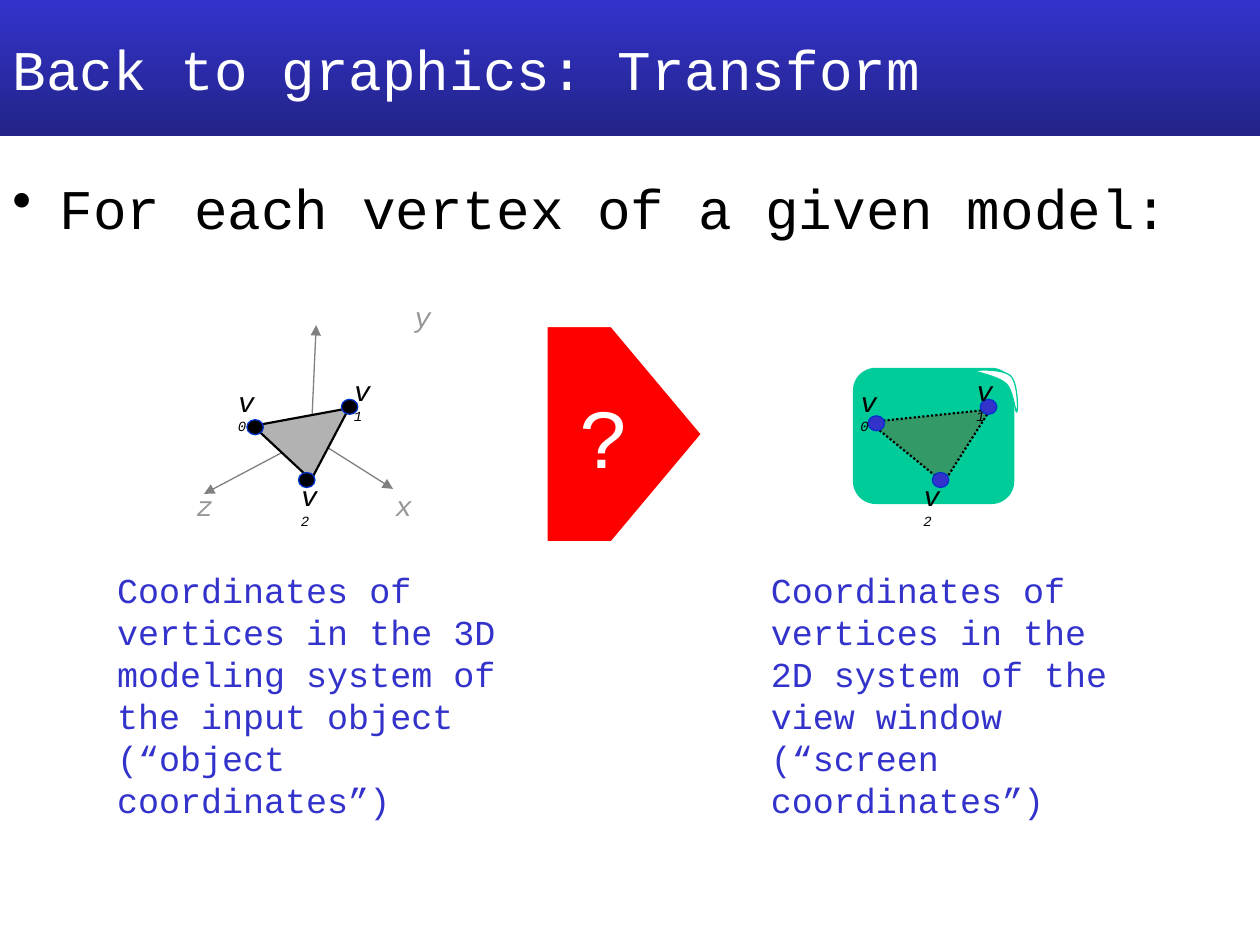
"""Build the slide that motivates the vertex transform in graphics."""
from dataclasses import dataclass
from typing import Sequence

from lxml import etree
from pptx import Presentation
from pptx import util as u
from pptx.dml.color import RGBColor
from pptx.enum import dml, shapes, text
from pptx.oxml import ns

Point = tuple[float, float]
FONT = "Courier New"
COLORS = {
    "blue": "3333CC", "navy": "232388", "white": "FFFFFF", "black": "000000",
    "window": "00CC99", "projected": "339966", "axis": "808080", "axis_name": "969696",
    "model": "B2B2B2", "rim": "0033CC", "transform": "FF0000",
}
LABEL_HEIGHT = 26.6
DOT_SIZE = (9.4, 8.6)
SCREEN_SHIFT = 355.7


@dataclass(frozen=True)
class Vertex:
    index: str
    label: Point
    model_dot: Point
    screen_dot: Point


@dataclass(frozen=True)
class Axis:
    name: str
    tip: Point
    label: Point


@dataclass(frozen=True)
class Caption:
    left: float
    width: float
    lines: Sequence[str]


VERTICES = (
    Vertex("0", (128.9, 216), (141.1, 239.8), (496.1, 237.6)),
    Vertex("1", (195.1, 210.2), (195.1, 228.2), (560.2, 228.2)),
    Vertex("2", (164.9, 270), (170.6, 270), (532.8, 270)),
)
ORIGIN = (177.8, 249.8)
AXES = (
    Axis("z", (116.6, 282.2), (105.1, 275.8)),
    Axis("x", (224.6, 279.4), (218.9, 275.8)),
    Axis("y", (180.7, 185.8), (229.7, 167.8)),
)
MODEL_TRIANGLE = ((144.7, 243.4), (177.8, 274.3), (199.4, 233.3))
SCREEN_TRIANGLE = ((496.8, 241.2), (539.3, 275.8), (565.9, 234))
CURL_START = (556.6, 211.7)
CURL = (
    ((555.8, 212.4), (571, 214.8), (575.3, 219.6)),
    ((578.9, 223.2), (580.3, 236.2), (581, 235.4)),
    ((581.8, 234.7), (581.8, 218.9), (577.4, 214.6)),
    ((571.7, 210.2), CURL_START, CURL_START),
)
CAPTIONS = (
    Caption(59.8, 249.1, (
        "Coordinates of vertices in the 3D modeling system of the input object",
        "(“object coordinates”)")),
    Caption(433.4, 226.8, (
        "Coordinates of vertices in the 2D system of the view window",
        "(“screen coordinates”)")),
)


def rgb(name: str) -> RGBColor:
    return RGBColor.from_string(COLORS[name])


def set_font(font, size: float, color: str, italic: bool = False) -> None:
    font.name, font.size, font.italic = FONT, u.Pt(size), italic
    font.color.rgb = rgb(color)


def paint(shape, fill: str, line: str | None = None, width: float = 0.75) -> None:
    shape.shadow.inherit = False
    shape.fill.solid()
    shape.fill.fore_color.rgb = rgb(fill)
    if line is None:
        shape.line.fill.background()
    else:
        shape.line.color.rgb = rgb(line)
        shape.line.width = u.Pt(width)


def add_preset(slide, preset, box: Sequence[float], fill: str, line: str | None = None,
               width: float = 0.75):
    shape = slide.shapes.add_shape(preset, *map(u.Pt, box))
    paint(shape, fill, line, width)
    return shape


def add_outline(slide, points: Sequence[Point], fill: str, line: str, width: float):
    start, *others = [(u.Pt(x), u.Pt(y)) for x, y in points]
    builder = slide.shapes.build_freeform(*start)
    builder.add_line_segments(others, close=True)
    shape = builder.convert_to_shape()
    paint(shape, fill, line, width)
    return shape


def curve_points(start: Point, curves, steps: int = 10) -> list[Point]:
    points = [start]
    for first, second, end in curves:
        for t in (step / steps for step in range(1, steps + 1)):
            weights = ((1 - t) ** 3, 3 * t * (1 - t) ** 2, 3 * t * t * (1 - t), t ** 3)
            controls = zip(start, first, second, end)
            points.append(tuple(sum(w * c for w, c in zip(weights, axis)) for axis in controls))
        start = end
    return points


def add_text(slide, box: Sequence[float], lines: Sequence[str], size: float, color: str,
             italic: bool = False, wrap: bool = True):
    frame = slide.shapes.add_textbox(*map(u.Pt, box)).text_frame
    frame.word_wrap = wrap
    frame.text = "\n".join(lines)
    for paragraph in frame.paragraphs:
        set_font(paragraph.font, size, color, italic)
    return frame


def add_vertex_label(slide, vertex: Vertex, shift: float = 0) -> None:
    left, top = vertex.label
    box = (left + shift, top, LABEL_HEIGHT, LABEL_HEIGHT)
    paragraph = add_text(slide, box, ["v"], 16, "black", italic=True).paragraphs[0]
    subscript = paragraph.add_run()
    subscript.text = vertex.index
    subscript.font.size = u.Pt(8)


def add_axis(slide, axis: Axis) -> None:
    arrow = slide.shapes.add_connector(
        shapes.MSO_CONNECTOR.STRAIGHT, *map(u.Pt, ORIGIN + axis.tip))
    arrow.line.color.rgb = rgb("axis")
    arrow.line.width = u.Pt(0.75)
    etree.SubElement(arrow.line._get_or_add_ln(), ns.qn("a:tailEnd"), type="triangle")
    etree.SubElement(arrow._element.spPr, ns.qn("a:effectLst"))
    add_text(slide, (*axis.label, 22.3, LABEL_HEIGHT), [axis.name], 16, "axis_name", italic=True)


def add_dot(slide, corner: Point, fill: str) -> None:
    add_preset(slide, shapes.MSO_SHAPE.OVAL, corner + DOT_SIZE, fill, "rim")


def add_heading(slide) -> None:
    title = slide.shapes.title
    title.left, title.top, title.width, title.height = map(u.Pt, (0, 0, 720, 77.8))
    title.fill.gradient()
    title.fill.gradient_angle = 270
    for stop, color, position in zip(title.fill.gradient_stops, ("blue", "navy"), (0, 1)):
        stop.color.rgb, stop.position = rgb(color), position
    frame = title.text_frame
    frame.text = "Back to graphics: Transform"
    frame.vertical_anchor = text.MSO_ANCHOR.MIDDLE
    frame.paragraphs[0].alignment = text.PP_ALIGN.LEFT
    set_font(frame.paragraphs[0].font, 32, "white")


def add_statement(slide) -> None:
    frame = add_text(slide, (0, 95.8, 720, 66.2), ["For each vertex of a given model:"], 32, "black")
    properties = frame.paragraphs[0]._p.get_or_add_pPr()
    properties.set("marL", str(u.Pt(27)))
    properties.set("indent", str(u.Pt(-27)))
    bullet = etree.Element(ns.qn("a:buChar"), char="•")
    properties.insert(0, bullet)


def add_screen(slide) -> None:
    add_preset(slide, shapes.MSO_SHAPE.ROUNDED_RECTANGLE, (487.4, 210.2, 92.2, 77.8), "window")
    add_outline(slide, curve_points(CURL_START, CURL), "white", "window", 0.75)
    projected = add_outline(slide, SCREEN_TRIANGLE, "projected", "black", 1.25)
    projected.line.dash_style = dml.MSO_LINE.ROUND_DOT
    for vertex in VERTICES:
        add_dot(slide, vertex.screen_dot, "blue")
    for vertex in VERTICES:
        add_vertex_label(slide, vertex, SCREEN_SHIFT)


def add_model(slide) -> None:
    for axis in AXES:
        add_axis(slide, axis)
    for vertex in VERTICES:
        add_vertex_label(slide, vertex)
    add_outline(slide, MODEL_TRIANGLE, "model", "black", 1.25)
    for vertex in VERTICES:
        add_dot(slide, vertex.model_dot, "black")


def main() -> None:
    deck = Presentation()
    deck.slide_width, deck.slide_height = u.Pt(720), u.Pt(540)
    slide = deck.slides.add_slide(deck.slide_layouts[5])
    add_heading(slide)
    add_screen(slide)
    add_model(slide)
    transform = add_preset(
        slide, shapes.MSO_SHAPE.RIGHT_ARROW, (311.8, 185.8, 90, 124.6), "transform", "white", 2.25)
    transform.adjustments[0], transform.adjustments[1] = 1, 0.58
    for caption in CAPTIONS:
        add_text(slide, (caption.left, 321.1, caption.width, 104.4), caption.lines, 20, "blue")
    add_statement(slide)
    add_text(slide, (324, 216, 41, 64.8), ["?"], 48, "white", wrap=False)
    deck.save("out.pptx")


if __name__ == "__main__":
    main()
